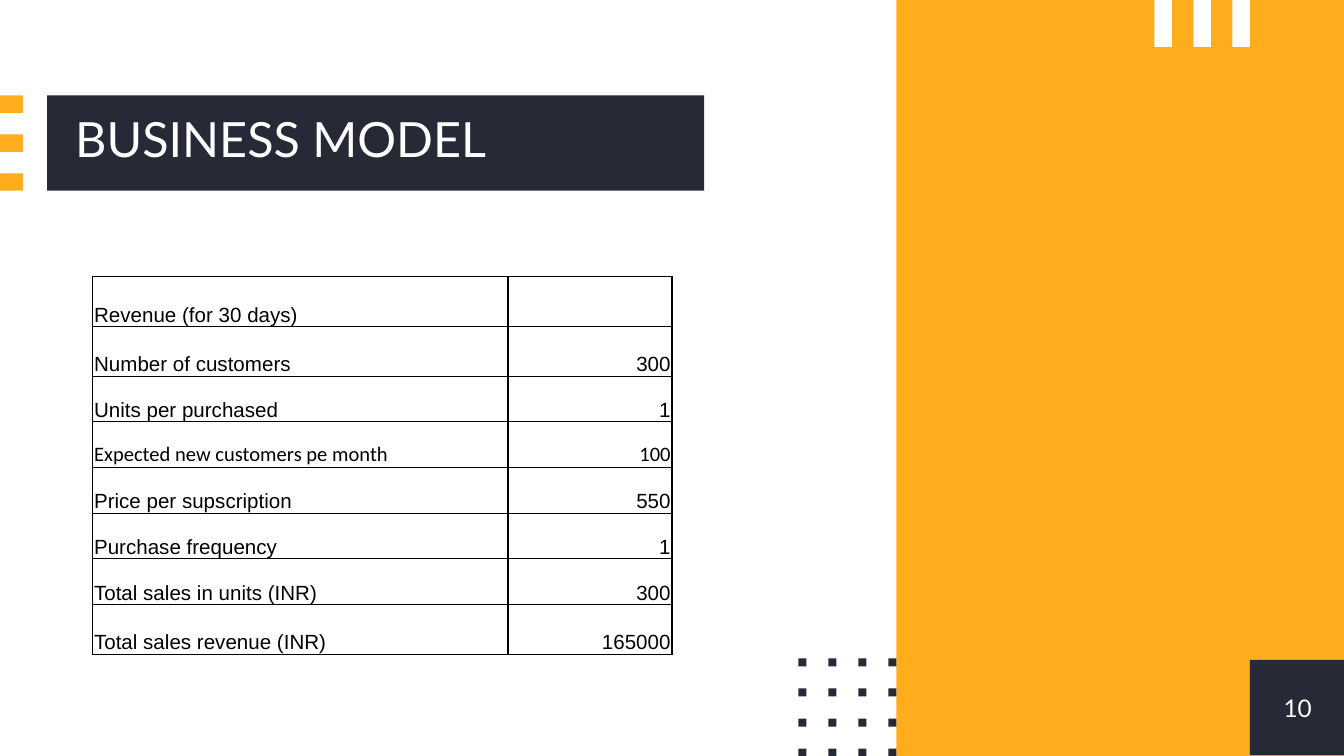
from dataclasses import dataclass

from lxml.etree import SubElement
from pptx import Presentation
from pptx.dml.color import RGBColor
from pptx.enum.shapes import MSO_SHAPE
from pptx.enum.text import MSO_ANCHOR, MSO_AUTO_SIZE, PP_ALIGN
from pptx.oxml.ns import qn
from pptx.util import Inches, Pt


@dataclass(frozen=True)
class Theme:
    amber: str = "FFAD1D"
    navy: str = "272A36"
    white: str = "FFFFFF"
    black: str = "000000"
    heading_font: str = "Lato"
    table_font: str = "Arial"
    accent_font: str = "Calibri"
    title_size: float = 26
    number_size: float = 13
    table_size: float = 11
    border: float = 0.75


class SlideBuilder:
    def __init__(self, slide, theme):
        self.s = slide
        self.theme = theme

    def style(self, p, font, size, color, align=PP_ALIGN.LEFT):
        p.alignment = align
        p.font.name = font
        p.font.size = Pt(size)
        p.font.color.rgb = RGBColor.from_string(color)

    def frame(self, tf):
        tf.margin_left = tf.margin_right = tf.margin_top = tf.margin_bottom = 0
        tf.word_wrap = True
        tf.auto_size = MSO_AUTO_SIZE.NONE
        tf.vertical_anchor = MSO_ANCHOR.MIDDLE

    def rect(self, x, y, w, h, color):
        sp = self.s.shapes.add_shape(
            MSO_SHAPE.RECTANGLE, Inches(x), Inches(y), Inches(w), Inches(h))
        sp.shadow.inherit = False
        sp.fill.solid()
        sp.fill.fore_color.rgb = RGBColor.from_string(color)
        sp.line.fill.background()

    def grid(self, x, y, w, h, color, cols=1, rows=1, step=0.29):
        for row in range(rows):
            for col in range(cols):
                self.rect(x + col * step, y + row * step, w, h, color)

    def title(self, text, x, y, w, h):
        sp = self.s.shapes.title
        sp.left, sp.top, sp.width, sp.height = map(Inches, (x, y, w, h))
        self.s.shapes._spTree.append(sp._element)
        tf = sp.text_frame
        tf.text = text
        self.frame(tf)
        p = tf.paragraphs[0]
        p.line_spacing = 0.8
        self.style(p, self.theme.heading_font, self.theme.title_size, self.theme.white)

    def text(self, text, x, y, w, h):
        sp = self.s.shapes.add_textbox(Inches(x), Inches(y), Inches(w), Inches(h))
        tf = sp.text_frame
        tf.text = text
        self.frame(tf)
        self.style(tf.paragraphs[0], self.theme.heading_font,
                   self.theme.number_size, self.theme.white, PP_ALIGN.CENTER)

    def borders(self, cell):
        tcPr = cell._tc.get_or_add_tcPr()
        for i, side in enumerate(("a:lnL", "a:lnR", "a:lnT", "a:lnB")):
            ln = SubElement(tcPr, qn(side), w=str(Pt(self.theme.border)))
            fill = SubElement(ln, qn("a:solidFill"))
            SubElement(fill, qn("a:srgbClr"), val=self.theme.black)
            tcPr.insert(i, ln)

    def cell(self, cell, text, font, align):
        cell.fill.background()
        cell.margin_left = cell.margin_right = cell.margin_top = Inches(0.01)
        cell.margin_bottom = 0
        cell.vertical_anchor = MSO_ANCHOR.BOTTOM
        cell.text = text
        self.style(cell.text_frame.paragraphs[0], font,
                   self.theme.table_size, self.theme.black, align)
        self.borders(cell)

    def table(self, x, y, widths, rows):
        height = sum(h for _, _, h, _ in rows)
        table = self.s.shapes.add_table(
            len(rows), len(widths), Inches(x), Inches(y),
            Inches(sum(widths)), Inches(height)).table
        table.first_row = table.horz_banding = False
        for column, width in zip(table.columns, widths):
            column.width = Inches(width)
        for i, (label, value, h, font) in enumerate(rows):
            table.rows[i].height = Inches(h)
            self.cell(table.cell(i, 0), label, font, PP_ALIGN.LEFT)
            self.cell(table.cell(i, 1), value, font, PP_ALIGN.RIGHT)


def main():
    prs = Presentation()
    prs.slide_width = Inches(10)
    prs.slide_height = prs.slide_width * 9 // 16
    theme = Theme()
    slide = SlideBuilder(prs.slides.add_slide(prs.slide_layouts[5]), theme)

    slide.rect(6.67, 0, 3.34, prs.slide_height.inches, theme.amber)
    slide.rect(9.3, 4.91, 0.71, 0.71, theme.navy)
    slide.rect(0.35, 0.71, 4.89, 0.71, theme.navy)
    slide.grid(0, 0.71, 0.17, 0.13, theme.amber, rows=3)
    slide.grid(5.94, 4.9, 0.06, 0.06, theme.navy, cols=4, rows=4, step=0.67 / 3)
    slide.grid(8.59, 0, 0.13, 0.35, theme.white, cols=3)

    slide.title("BUSINESS MODEL", 0.56, 0.71, 4.69, 0.71)
    slide.text("10", 9.3, 4.91, 0.71, 0.71)
    slide.table(0.69, 2.06, (3.09, 1.22), (
        ("Revenue (for 30 days)", "", 0.37, theme.table_font),
        ("Number of customers", "300", 0.37, theme.table_font),
        ("Units per purchased", "1", 0.34, theme.table_font),
        ("Expected new customers pe month", "100", 0.34, theme.accent_font),
        ("Price per supscription", "550", 0.34, theme.table_font),
        ("Purchase frequency", "1", 0.34, theme.table_font),
        ("Total sales in units (INR)", "300", 0.34, theme.table_font),
        ("Total sales revenue (INR)", "165000", 0.37, theme.table_font),
    ))
    prs.save("out.pptx")


if __name__ == "__main__":
    main()
